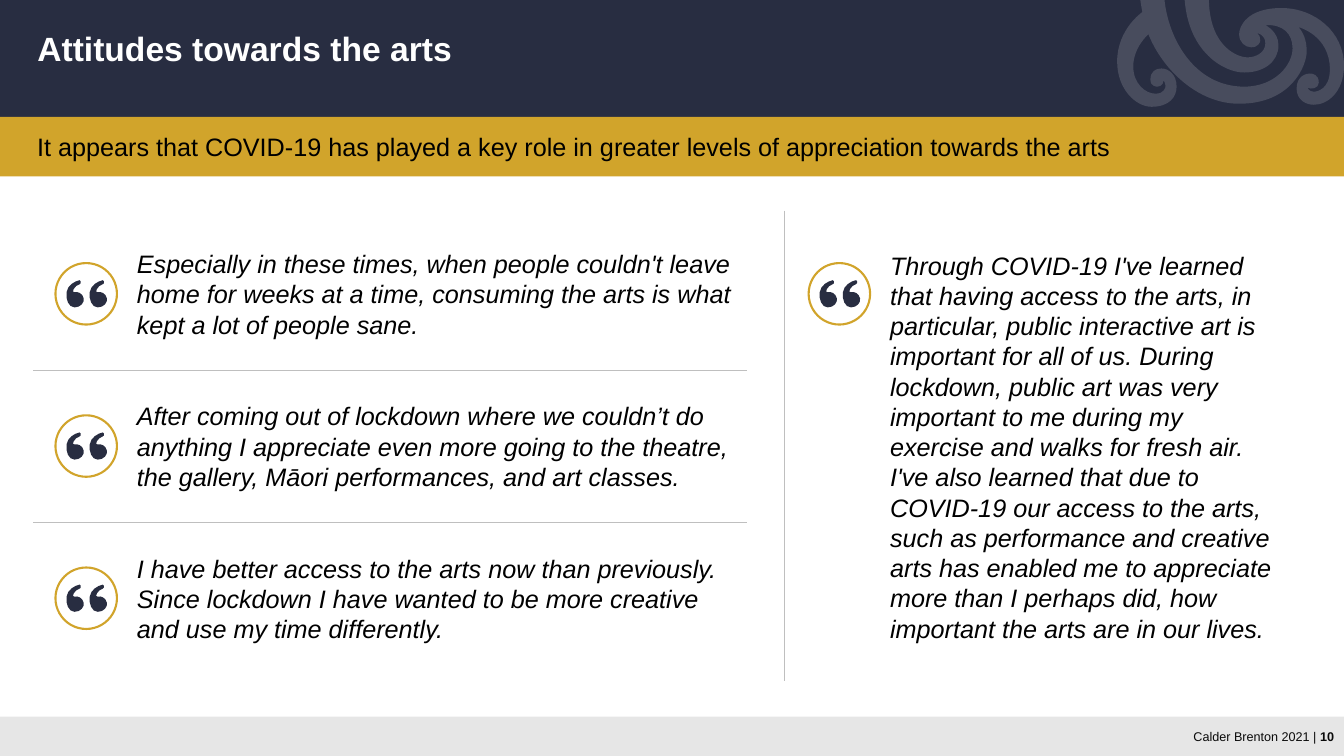
from pptx import Presentation
from pptx.dml.color import RGBColor
from pptx.enum.shapes import MSO_CONNECTOR, MSO_SHAPE
from pptx.enum.text import MSO_ANCHOR, MSO_AUTO_SIZE, PP_ALIGN
from pptx.oxml.ns import qn
from pptx.util import Inches, Pt
from lxml.etree import SubElement

TITLE = "Attitudes towards the arts"
SUBTITLE = "It appears that COVID-19 has played a key role in greater levels of appreciation towards the arts"
LEFT_QUOTES = [
    "Especially in these times, when people couldn't leave home for weeks at a time, "
    "consuming the arts is what kept a lot of people sane.",
    "After coming out of lockdown where we couldn’t do anything I appreciate even more "
    "going to the theatre, the gallery, Māori performances, and art classes.",
    "I have better access to the arts now than previously. Since lockdown I have wanted "
    "to be more creative and use my time differently.",
]
RIGHT_QUOTE = (
    "Through COVID-19 I've learned that having access to the arts, in particular, public "
    "interactive art is important for all of us. During lockdown, public art was very "
    "important to me during my exercise and walks for fresh air. I've also learned that due "
    "to COVID-19 our access to the arts, such as performance and creative arts has enabled "
    "me to appreciate more than I perhaps did, how important the arts are in our lives."
)
FOOTER = "Calder Brenton 2021 | "
PAGE_NUMBER = "10"

NAVY = RGBColor(0x28, 0x2D, 0x41)
GOLD = RGBColor(0xD1, 0xA4, 0x2B)
PALE_GREY = RGBColor(0xE6, 0xE6, 0xE6)
RULE_GREY = RGBColor(0xBF, 0xBF, 0xBF)
INK = RGBColor(0x0A, 0x0A, 0x0A)
BLACK = RGBColor(0, 0, 0)
WHITE = RGBColor(0xFF, 0xFF, 0xFF)

SLIDE_W, SLIDE_H = 13.33, 7.5
TEXT_LEFT, TEXT_W = 0.27, 12.78
ROW_TOP, ROW_PITCH, ROW_H = 2.41, 1.51, 1.01
LEFT_ICON, RIGHT_ICON = 0.55, 8.02
CIRCLE, CIRCLE_DROP = 0.61, 0.2
MARK_GAP = 0.23

QUOTE_MARK = [
    (0.28, 0.35),
    (0.29, 0.39, 0.25, 0.44, 0.19, 0.44), (0.13, 0.44, 0.10, 0.36, 0.11, 0.29),
    (0.12, 0.22, 0.19, 0.18, 0.24, 0.17), (0.25, 0.17, 0.25, 0.17, 0.25, 0.18),
    (0.25, 0.18, 0.25, 0.18, 0.25, 0.18), (0.25, 0.20),
    (0.25, 0.20, 0.25, 0.21, 0.24, 0.21), (0.19, 0.22, 0.15, 0.30, 0.19, 0.29),
    (0.22, 0.28, 0.27, 0.30, 0.28, 0.35),
]
SCROLL = [
    (11.08, 0.61),
    (11.08, 0.89, 11.27, 1.06, 11.42, 1.06), (11.6, 1.06, 11.67, 0.96, 11.67, 0.86),
    (11.67, 0.74, 11.59, 0.68, 11.52, 0.68), (11.46, 0.68, 11.41, 0.71, 11.41, 0.79),
    (11.41, 0.86, 11.47, 0.86, 11.48, 0.86), (11.49, 0.86, 11.54, 0.85, 11.54, 0.8),
    (11.54, 0.8, 11.56, 0.82, 11.56, 0.85), (11.56, 0.87, 11.55, 0.93, 11.46, 0.93),
    (11.36, 0.93, 11.24, 0.83, 11.24, 0.66), (11.24, 0.47, 11.39, 0.34, 11.39, 0.34),
    (11.53, 0.69, 11.88, 1.03, 12.29, 1.03), (12.81, 1.03, 12.96, 0.65, 12.96, 0.51),
    (12.96, 0.45, 12.95, 0.35, 12.88, 0.27), (12.88, 0.27, 13.19, 0.35, 13.19, 0.69),
    (13.19, 0.88, 13.07, 0.91, 13.03, 0.91), (12.98, 0.91, 12.97, 0.87, 12.97, 0.87),
    (13, 0.89, 13.08, 0.88, 13.08, 0.82), (13.08, 0.74, 13.02, 0.73, 12.99, 0.73),
    (12.96, 0.73, 12.86, 0.75, 12.86, 0.88), (12.86, 0.99, 12.95, 1.04, 13.03, 1.04),
    (13.17, 1.04, 13.33, 0.91, 13.33, 0.65), (13.33, 0.32, 13.04, 0.08, 12.71, 0.08),
    (12.37, 0.08, 12.29, 0.26, 12.29, 0.34), (12.29, 0.42, 12.35, 0.47, 12.41, 0.47),
    (12.48, 0.47, 12.5, 0.42, 12.5, 0.4), (12.5, 0.37, 12.49, 0.34, 12.47, 0.33),
    (12.47, 0.33, 12.55, 0.34, 12.55, 0.43), (12.55, 0.52, 12.46, 0.57, 12.37, 0.57),
    (12.29, 0.57, 12, 0.48, 11.99, 0), (11.75, 0),
    (11.79, 0.52, 12.14, 0.72, 12.34, 0.72), (12.54, 0.72, 12.68, 0.61, 12.68, 0.45),
    (12.68, 0.31, 12.55, 0.25, 12.55, 0.25), (12.72, 0.24, 12.82, 0.33, 12.82, 0.48),
    (12.82, 0.64, 12.65, 0.86, 12.34, 0.86), (11.85, 0.86, 11.59, 0.39, 11.55, 0),
    (11.31, 0), (11.32, 0.07, 11.33, 0.12, 11.33, 0.12),
    (11.33, 0.12, 11.08, 0.29, 11.08, 0.61),
]

prs = Presentation()
prs.slide_width, prs.slide_height = Inches(SLIDE_W), Inches(SLIDE_H)
slide = prs.slides.add_slide(prs.slide_layouts[5])
shapes = slide.shapes


def paint(shape, fill):
    shape.shadow.inherit = False
    shape.fill.solid()
    shape.fill.fore_color.rgb = fill
    shape.line.fill.background()


def add_band(top, height, fill):
    band = shapes.add_shape(MSO_SHAPE.RECTANGLE, 0, Inches(top), Inches(SLIDE_W), Inches(height))
    paint(band, fill)


def add_outline(outline, offsets, fill, close=True):
    points = [point for segment in outline for point in zip(segment[::2], segment[1::2])]
    contours = [[(Inches(x + dx), Inches(y + dy)) for x, y in points] for dx, dy in offsets]
    builder = shapes.build_freeform(*contours[0][0])
    for index, contour in enumerate(contours):
        if index:
            builder.move_to(*contour[0])
        builder.add_line_segments(contour[1:], close=close)
    curved = builder.convert_to_shape()
    legs = iter(list(curved.element.iter(qn("a:lnTo"))))
    for segment in outline[1:] * len(offsets):
        leg = next(legs)
        if len(segment) == 6:
            leg.tag = qn("a:cubicBezTo")
            for control in (next(legs), next(legs)):
                leg.append(control[0])
                control.getparent().remove(control)
    paint(curved, fill)
    return curved


def add_rule(x1, y1, x2, y2):
    rule = shapes.add_connector(MSO_CONNECTOR.STRAIGHT, Inches(x1), Inches(y1), Inches(x2), Inches(y2))
    rule.line.color.rgb = RULE_GREY
    rule.line.width = Pt(0.5)
    SubElement(rule.element.spPr, qn("a:effectLst"))


def set_font(paragraph, size, color):
    paragraph.font.name = "Arial"
    paragraph.font.size = Pt(size)
    paragraph.font.color.rgb = color


def add_text(text, left, top, width, height, size=18, color=BLACK, anchor=MSO_ANCHOR.MIDDLE, wrap=True):
    box = shapes.add_textbox(Inches(left), Inches(top), Inches(width), Inches(height))
    frame = box.text_frame
    frame.word_wrap = wrap
    frame.auto_size = MSO_AUTO_SIZE.SHAPE_TO_FIT_TEXT
    frame.vertical_anchor = anchor
    paragraph = frame.paragraphs[0]
    paragraph.add_run().text = text
    set_font(paragraph, size, color)
    return paragraph


def add_quote(text, icon_left, row_top, width, height):
    quote = add_text(text, icon_left + 0.71, row_top, width, height)
    quote.font.italic = True


def add_circle(left, top):
    circle = shapes.add_shape(MSO_SHAPE.OVAL, Inches(left), Inches(top), Inches(CIRCLE), Inches(CIRCLE))
    circle.shadow.inherit = False
    circle.fill.background()
    circle.line.color.rgb = GOLD
    circle.line.width = Pt(1.5)


add_band(0, 1.18, NAVY)
scroll = add_outline(SCROLL, [(0, 0)], WHITE, close=False)
scroll_color = scroll.element.spPr.find(qn("a:solidFill"))[0]
SubElement(scroll_color, qn("a:alpha"), val="15000")
add_band(7.11, 0.39, PALE_GREY)
footer = add_text(FOOTER, 11.57, 7.18, 1.76, 0.25, size=9, color=INK, wrap=False)
footer.alignment = PP_ALIGN.RIGHT
page_number = footer.add_run()
page_number.text = PAGE_NUMBER
page_number.font.bold = True

title = shapes.title
shapes.element.append(title.element)
title.left, title.top, title.width, title.height = (Inches(n) for n in (TEXT_LEFT, 0.27, TEXT_W, 0.46))
title.text_frame.text = TITLE
title.text_frame.word_wrap = True
title.text_frame.auto_size = MSO_AUTO_SIZE.SHAPE_TO_FIT_TEXT
title.text_frame.vertical_anchor = MSO_ANCHOR.TOP
heading = title.text_frame.paragraphs[0]
heading.alignment = PP_ALIGN.LEFT
heading.line_spacing = 0.9
set_font(heading, 24, WHITE)
heading.font.bold = True

add_band(1.16, 0.59, GOLD)
add_text(SUBTITLE, TEXT_LEFT, 1.25, TEXT_W, 0.4, anchor=MSO_ANCHOR.TOP)

row_tops = [ROW_TOP + row * ROW_PITCH for row in range(len(LEFT_QUOTES))]
icons = [(LEFT_ICON, top + CIRCLE_DROP) for top in row_tops] + [(RIGHT_ICON, ROW_TOP + CIRCLE_DROP)]

add_rule(7.78, 2.09, 7.78, 6.76)
add_quote(RIGHT_QUOTE, RIGHT_ICON, ROW_TOP, 4.01, 4.04)
for top in row_tops[1:]:
    add_rule(0.33, top - 0.25, 7.41, top - 0.25)
for text, top in zip(LEFT_QUOTES, row_tops):
    add_quote(text, LEFT_ICON, top, 6.16, ROW_H)
for left, top in icons:
    add_circle(left, top)
for left, top in icons:
    add_outline(QUOTE_MARK, [(left, top), (left + MARK_GAP, top)], NAVY)

prs.save("out.pptx")
